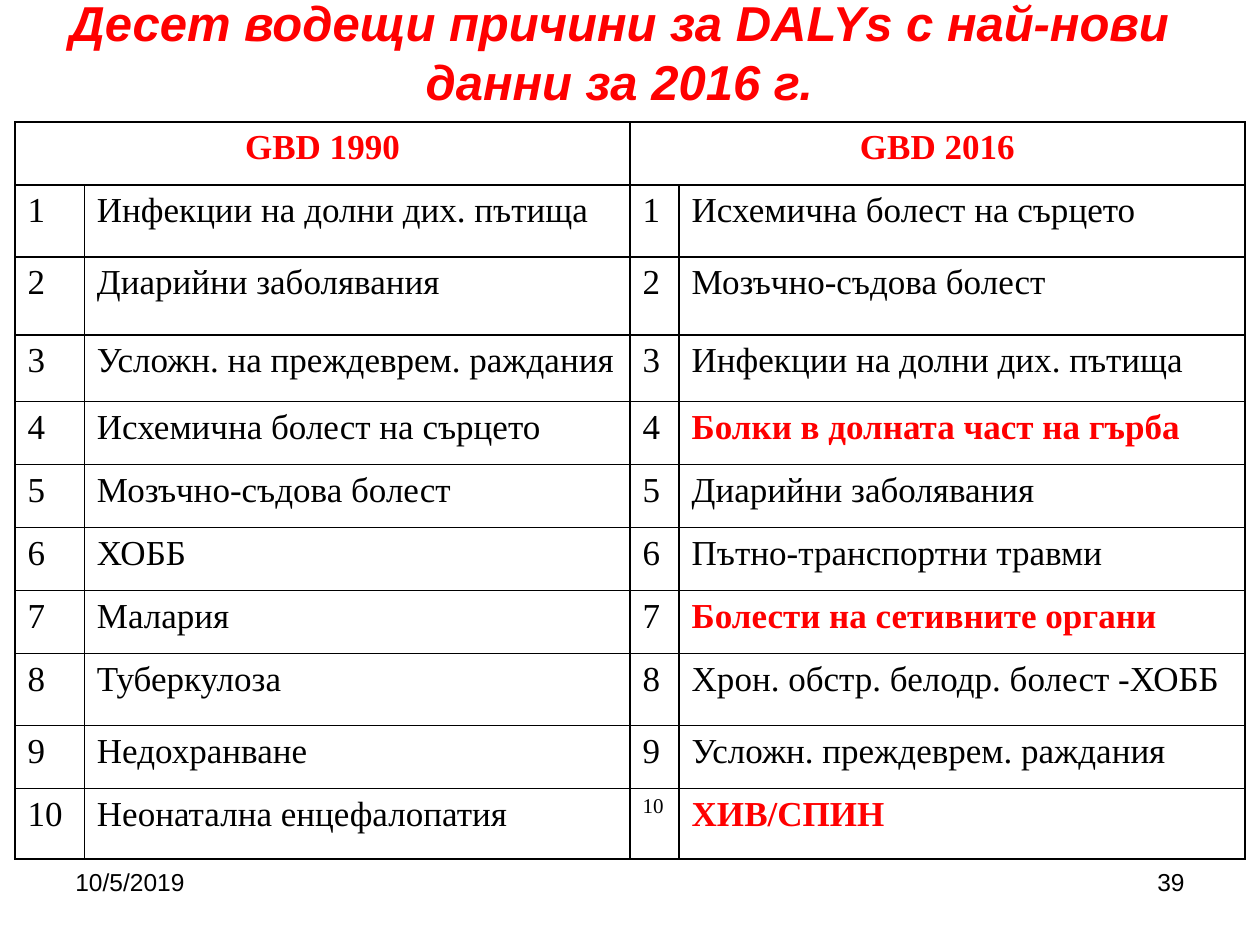
from dataclasses import dataclass

from lxml.etree import SubElement
from pptx import Presentation
from pptx.dml.color import RGBColor
from pptx.enum.text import MSO_ANCHOR as Anchor, MSO_AUTO_SIZE as AutoSize, PP_ALIGN as Align
from pptx.oxml.ns import qn
from pptx.util import Pt


@dataclass(frozen=True)
class Theme:
    ink: RGBColor = RGBColor(0, 0, 0)
    accent: RGBColor = RGBColor(255, 0, 0)
    line: str = "000000"
    sans: str = "Arial"
    serif: str = "Times New Roman"
    title: int = 28
    body: int = 20
    footer: int = 14
    small: int = 12


THEME = Theme()
TITLE = "Десет водещи причини за DALYs с най-нови данни за 2016 г."
HEADERS = ("GBD 1990", "GBD 2016")
CAUSES = [
    ("Инфекции на долни дих. пътища", "Исхемична болест на сърцето"),
    ("Диарийни заболявания", "Мозъчно-съдова болест"),
    ("Усложн. на преждеврем. раждания", "Инфекции на долни дих. пътища"),
    ("Исхемична болест на сърцето", "Болки в долната част на гърба"),
    ("Мозъчно-съдова болест", "Диарийни заболявания"),
    ("ХОББ", "Пътно-транспортни травми"),
    ("Малария", "Болести на сетивните органи"),
    ("Туберкулоза", "Хрон. обстр. белодр. болест -ХОББ"),
    ("Недохранване", "Усложн. преждеврем. раждания"),
    ("Неонатална енцефалопатия", "ХИВ/СПИН"),
]
NEW_CAUSES = {4, 7, 10}
COLUMN_WIDTHS = (39.6, 311.8, 28.1, 323.3)
ROW_HEIGHTS = (36, 41, 44.6, 38.2, 36, 36, 36, 36, 41, 36, 40.3)


def write(frame, text, align, color=THEME.ink, **font):
    """Put one formatted paragraph into a text frame."""
    para = frame.paragraphs[0]
    para.alignment = align
    span = para.add_run()
    span.text = text
    for name, value in font.items():
        setattr(span.font, name, value)
    span.font.color.rgb = color


def place(shape, left, top, width, height):
    bounds = {"left": left, "top": top, "width": width, "height": height}
    for name, value in bounds.items():
        setattr(shape, name, Pt(value))


def add_title(page):
    title = page.shapes.title
    place(title, 19.4, -7.9, 668.9, 74.9)
    frame = title.text_frame
    settings = {"word_wrap": True, "auto_size": AutoSize.NONE, "vertical_anchor": Anchor.MIDDLE}
    for name, value in settings.items():
        setattr(frame, name, value)
    write(frame, TITLE, Align.CENTER, THEME.accent, name=THEME.sans,
          size=Pt(THEME.title), bold=True, italic=True)


def add_footer(page, text, left, align):
    box = page.shapes.add_textbox(Pt(left), Pt(491.8), Pt(167.8), Pt(37.4))
    box.text_frame.word_wrap = True
    write(box.text_frame, text, align, name=THEME.sans, size=Pt(THEME.footer))


def add_borders(cell):
    properties = cell._tc.get_or_add_tcPr()
    for side in ("lnL", "lnR", "lnT", "lnB"):
        line = SubElement(properties, qn(f"a:{side}"), w=str(Pt(1)))
        fill = SubElement(line, qn("a:solidFill"))
        SubElement(fill, qn("a:srgbClr"), val=THEME.line)


def fill_cell(cell, text, align=Align.JUSTIFY, size=THEME.body, strong=False):
    write(cell.text_frame, text, align, THEME.accent if strong else THEME.ink,
          name=THEME.serif, size=Pt(size), bold=strong)


def add_causes_table(page):
    table = page.shapes.add_table(
        len(ROW_HEIGHTS), len(COLUMN_WIDTHS), Pt(8.6), Pt(69.8),
        Pt(sum(COLUMN_WIDTHS)), Pt(sum(ROW_HEIGHTS))).table
    table.first_row = table.horz_banding = False
    for column, width in zip(table.columns, COLUMN_WIDTHS):
        column.width = Pt(width)
    for row, height in zip(table.rows, ROW_HEIGHTS):
        row.height = Pt(height)
    for cell in table.iter_cells():
        add_borders(cell)
        cell.fill.background()

    # Each year takes a rank column and a cause column
    for year, header in enumerate(HEADERS):
        left = 2 * year
        table.cell(0, left).merge(table.cell(0, left + 1))
        fill_cell(table.cell(0, left), header, Align.CENTER, strong=True)
        for rank, causes in enumerate(CAUSES, start=1):
            narrow = year == 1 and rank == 10
            fill_cell(table.cell(rank, left), str(rank),
                      size=THEME.small if narrow else THEME.body)
            fill_cell(table.cell(rank, left + 1), causes[year],
                      strong=year == 1 and rank in NEW_CAUSES)


def main():
    deck = Presentation()
    deck.slide_width, deck.slide_height = Pt(720), Pt(540)
    page = deck.slides.add_slide(deck.slide_layouts[5])

    # Heading and ranking
    add_title(page)
    add_causes_table(page)

    # Date and page number
    add_footer(page, "10/5/2019", 36, Align.LEFT)
    add_footer(page, "39", 516.2, Align.RIGHT)

    deck.save("out.pptx")


if __name__ == "__main__":
    main()
